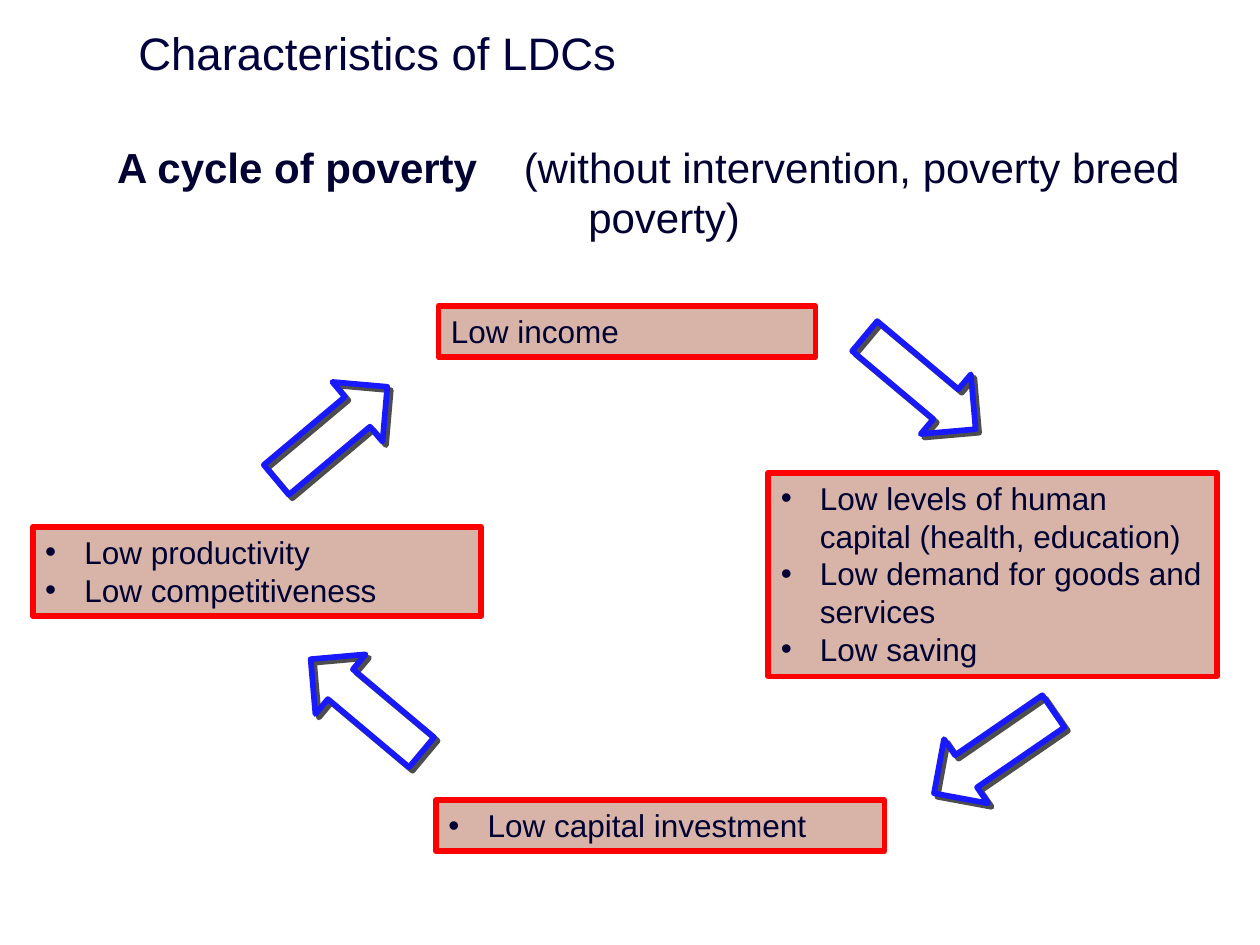
from dataclasses import dataclass

from lxml import etree
from pptx import Presentation
from pptx.dml.color import RGBColor
from pptx.enum.shapes import MSO_SHAPE
from pptx.enum.text import MSO_ANCHOR, MSO_AUTO_SIZE, PP_ALIGN
from pptx.oxml.ns import qn
from pptx.util import Cm, Pt

RECTANGLE = MSO_SHAPE.RECTANGLE
RIGHT_ARROW = MSO_SHAPE.RIGHT_ARROW
TOP = MSO_ANCHOR.TOP
MIDDLE = MSO_ANCHOR.MIDDLE
LEFT = PP_ALIGN.LEFT
FIT_SHAPE = MSO_AUTO_SIZE.SHAPE_TO_FIT_TEXT


@dataclass(frozen=True)
class Theme:
    font: str = "Arial"
    title_color: str = "00003E"
    text_color: str = "000032"
    box_fill: str = "CD9C8D"
    box_opacity: int = 76
    box_line: str = "FF0000"
    arrow_line: str = "1919FF"
    shadow: str = "4D4D4D"
    shadow_distance: float = 2.8
    line_width: float = 3.25
    title_size: int = 26
    body_size: int = 24
    box_size: int = 18
    line_spacing: float = 1.2
    bullet_indent: float = 0.79


def add_xml(parent, tag, **attributes):
    values = {name: str(value) for name, value in attributes.items()}
    return etree.SubElement(parent, qn(tag), values)


class SlideBuilder:
    def __init__(self, slide, theme):
        self.slide = slide
        self.theme = theme

    def format_paragraph(self, paragraph, size, color):
        paragraph.alignment = LEFT
        paragraph.line_spacing = Pt(round(size * self.theme.line_spacing, 1))
        values = {"name": self.theme.font, "size": Pt(size)}
        for run in paragraph.runs:
            for name, value in values.items():
                setattr(run.font, name, value)
            run.font.color.rgb = RGBColor.from_string(color)

    def add_text_box(self, left, top, width, height, anchor):
        """Add an empty wrapping text box and return its first paragraph."""
        box = self.slide.shapes.add_textbox(Cm(left), Cm(top), Cm(width), Cm(height))
        box.text_frame.word_wrap = True
        box.text_frame.vertical_anchor = anchor
        return box.text_frame.paragraphs[0]

    def add_title(self, text):
        paragraph = self.add_text_box(2.54, 0.41, 22.86, 1.3, MIDDLE)
        paragraph.add_run().text = text
        self.format_paragraph(paragraph, self.theme.title_size, self.theme.title_color)

    def add_heading(self, heading, remark_lines, tab_stops):
        """Add a bold heading with a remark, each remark line at its own tab stop."""
        paragraph = self.add_text_box(2.11, 2.72, 22.43, 12.57, TOP)
        tab_list = add_xml(paragraph._p.get_or_add_pPr(), "a:tabLst")
        for stop in tab_stops:
            add_xml(tab_list, "a:tab", pos=Cm(stop), algn="l")
        run = paragraph.add_run()
        run.text = heading
        run.font.bold = True
        for index, line in enumerate(remark_lines):
            if index:
                paragraph.add_line_break()
            paragraph.add_run().text = "\t" * (index + 1) + line
        self.format_paragraph(paragraph, self.theme.body_size, self.theme.text_color)

    def add_outlined_shape(self, kind, left, top, width, height, line_color):
        shape = self.slide.shapes.add_shape(
            kind, Cm(left), Cm(top), Cm(width), Cm(height))
        shape.shadow.inherit = False
        shape.line.color.rgb = RGBColor.from_string(line_color)
        shape.line.width = Pt(self.theme.line_width)
        add_xml(shape.line._get_or_add_ln(), "a:round")
        return shape

    def add_stage(self, left, top, width, height, lines, bulleted=True):
        theme = self.theme
        shape = self.add_outlined_shape(
            RECTANGLE, left, top, width, height, theme.box_line)
        shape.fill.solid()
        shape.fill.fore_color.rgb = RGBColor.from_string(theme.box_fill)
        color = shape.fill._xPr.find(".//" + qn("a:srgbClr"))
        add_xml(color, "a:alpha", val=theme.box_opacity * 1000)
        frame = shape.text_frame
        frame.word_wrap = True
        frame.auto_size = FIT_SHAPE
        frame.vertical_anchor = TOP
        for index, line in enumerate(lines):
            paragraph = frame.add_paragraph() if index else frame.paragraphs[0]
            if bulleted:
                properties = paragraph._p.get_or_add_pPr()
                indent = Cm(theme.bullet_indent)
                properties.set("marL", str(indent))
                properties.set("indent", str(-indent))
                add_xml(properties, "a:buFont", typeface=theme.font)
                add_xml(properties, "a:buChar", char="•")
            paragraph.add_run().text = line
            self.format_paragraph(paragraph, theme.box_size, theme.text_color)

    def add_arrow(self, left, top, rotation):
        theme = self.theme
        shape = self.add_outlined_shape(
            RIGHT_ARROW, left, top, 2.92, 1.57, theme.arrow_line)
        shape.fill.background()
        shape.rotation = rotation
        effects = shape._element.spPr.find(qn("a:effectLst"))
        shadow = add_xml(effects, "a:outerShdw", dist=Pt(theme.shadow_distance),
                         dir=45 * 60000, algn="ctr", rotWithShape=0)
        add_xml(shadow, "a:srgbClr", val=theme.shadow)


def main():
    presentation = Presentation()
    presentation.slide_width = Cm(25.4)
    presentation.slide_height = Cm(19.05)
    slide = presentation.slides.add_slide(presentation.slide_layouts[6])
    builder = SlideBuilder(slide, Theme())

    builder.add_title("Characteristics of LDCs")
    builder.add_heading(
        "A cycle of poverty",
        ["(without intervention, poverty breed", "poverty)"],
        tab_stops=[8.2, 9.5])

    builder.add_stage(8.84, 6.17, 7.6, 1.03, ["Low income"], bulleted=False)
    stages = [
        (15.49, 9.53, 4.11, ["Low levels of human capital (health, education)",
                             "Low demand for goods and services",
                             "Low saving"]),
        (8.79, 16.13, 1.03, ["Low capital investment"]),
        (0.66, 10.62, 1.8, ["Low productivity", "Low competitiveness"]),
    ]
    for left, top, height, lines in stages:
        builder.add_stage(left, top, 9.04, height, lines)

    arrows = [(17.09, 6.93, 40), (18.57, 14.38, 145.5),
              (5.23, 7.95, 320), (5.92, 13.44, 220)]
    for left, top, rotation in arrows:
        builder.add_arrow(left, top, rotation)

    presentation.save("out.pptx")


if __name__ == "__main__":
    main()
